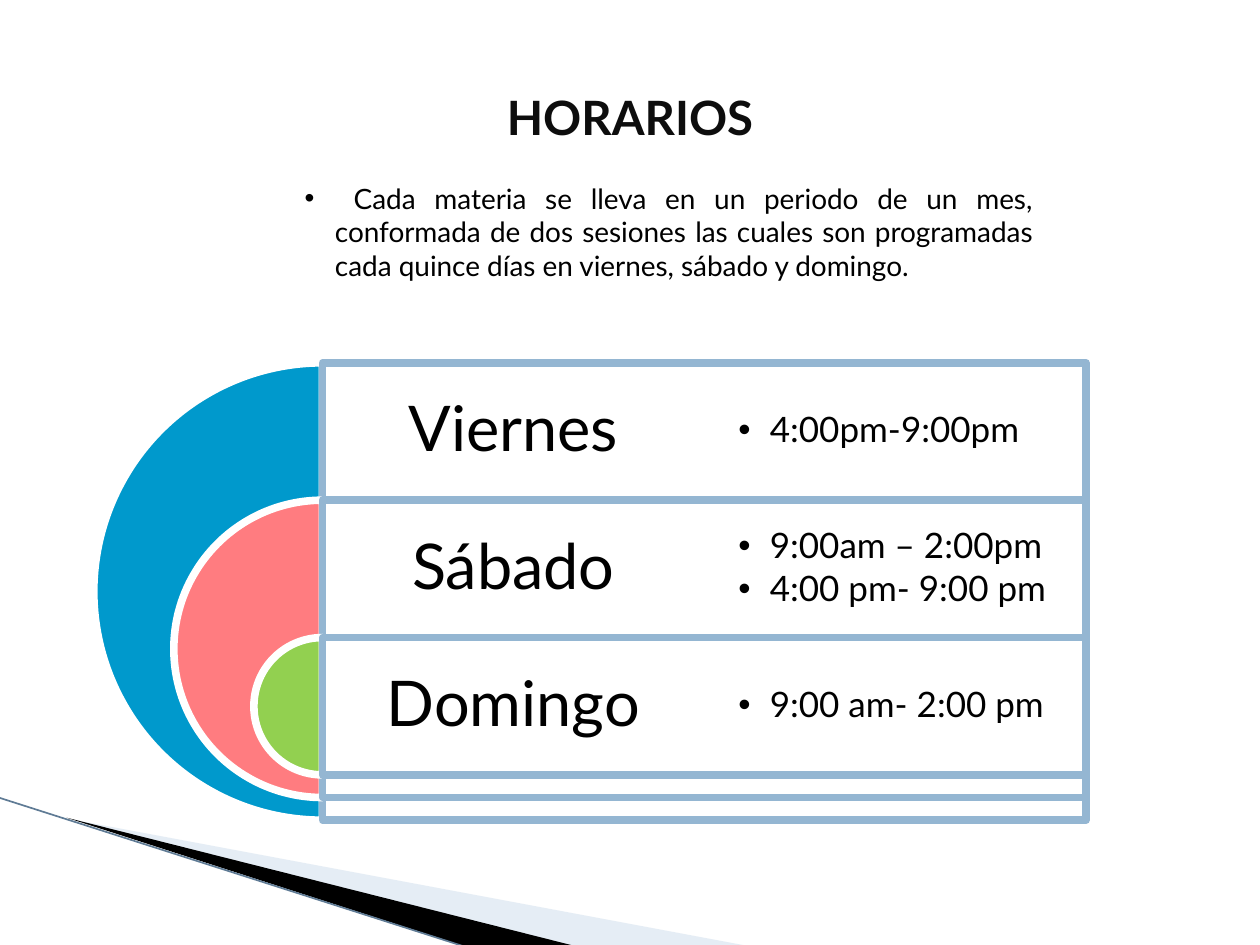
from dataclasses import dataclass
from typing import Sequence

from pptx import Presentation, util as u
from pptx.dml.color import RGBColor
from pptx.enum import shapes, text
from pptx.oxml import parse_xml
from pptx.oxml.ns import nsdecls, qn


@dataclass(frozen=True)
class Theme:
    font: str = "Lato"
    ink: str = "000000"
    heading: str = "0D0D0D"
    paper: str = "FFFFFF"
    frame: str = "94B6D2"
    wedge: str = "C0D3E6"
    edge: str = "5F7B95"
    title_size: float = 27
    body_size: float = 16
    day_size: float = 36
    hours_size: float = 20
    border: float = 4.33


@dataclass(frozen=True)
class Day:
    name: str
    hours: Sequence[str]
    color: str


@dataclass(frozen=True)
class Box:
    left: float
    top: float
    width: float
    height: float

    def emu(self) -> list:
        return [u.Inches(v) for v in (self.left, self.top, self.width, self.height)]


THEME = Theme()
WIDTH, HEIGHT = 10, 7.5
GRID_LEFT, GRID_TOP = 2.56, 2.88
COLUMN, ROW = 3.03, 1.09
RING_STEP = 1.27
DAYS = (
    Day("Viernes", ("4:00pm-9:00pm",), "0099CC"),
    Day("Sábado", ("9:00am – 2:00pm", "4:00 pm- 9:00 pm"), "FF7C80"),
    Day("Domingo", ("9:00 am- 2:00 pm",), "92D050"),
)
INTRO = (" Cada materia se lleva en un periodo de un mes, conformada de dos sesiones "
         "las cuales son programadas cada quince días en viernes, sábado y domingo.")


def rgb(value: str) -> RGBColor:
    return RGBColor.from_string(value)


def fill_shape(sp, color: str, opacity: int = 100) -> None:
    sp.shadow.inherit = False
    sp.fill.solid()
    sp.fill.fore_color.rgb = rgb(color)
    if opacity < 100:
        clr = sp._element.spPr.find(qn("a:solidFill"))[0]
        clr.append(parse_xml(f'<a:alpha {nsdecls("a")} val="{opacity * 1000}"/>'))


def add_block(s, kind, box: Box, color: str, line: str, opacity: int = 100):
    sp = s.shapes.add_shape(kind, *box.emu())
    fill_shape(sp, color, opacity)
    sp.line.color.rgb = rgb(line)
    sp.line.width = u.Pt(THEME.border)
    return sp


def add_wedge(s, points: Sequence, color: str, opacity: int = 100) -> None:
    (x, y), *rest = [(u.Inches(px), u.Inches(py)) for px, py in points]
    builder = s.shapes.build_freeform(x, y)
    builder.add_line_segments(rest, close=True)
    sp = builder.convert_to_shape()
    fill_shape(sp, color, opacity)
    sp.line.fill.background()


def add_text(s, box: Box, lines: Sequence[str], size: float, align, *,
             color: str = THEME.ink, bold: bool = False, bullet: float = 0,
             inset: float = 0, spacing: float = 1, after: float = 0,
             anchor=text.MSO_ANCHOR.MIDDLE) -> None:
    """Add a text box; bullet is the hanging indent in inches, 0 for none."""
    tf = s.shapes.add_textbox(*box.emu()).text_frame
    tf.word_wrap = True
    tf.vertical_anchor = anchor
    if inset:
        tf.margin_left = tf.margin_right = u.Inches(inset)
        tf.margin_top = tf.margin_bottom = u.Inches(inset)
    tf.text = "\n".join(lines)
    for p in tf.paragraphs:
        p.alignment = align
        p.line_spacing = spacing
        p.space_after = u.Pt(after)
        if bullet:
            pPr = p._p.get_or_add_pPr()
            pPr.set("marL", str(u.Inches(bullet)))
            pPr.set("indent", str(-u.Inches(bullet)))
            pPr.append(parse_xml(f'<a:buFont {nsdecls("a")} typeface="Arial"/>'))
            pPr.append(parse_xml(f'<a:buChar {nsdecls("a")} char="•"/>'))
        for r in p.runs:
            r.font.name, r.font.size, r.font.bold = THEME.font, u.Pt(size), bold
            r.font.color.rgb = rgb(color)


def add_corner(s) -> None:
    """Draw the slanted decoration at the foot of the slide."""
    add_wedge(s, ((0.55, 6.5), (5.95, 7.51), (4.56, 7.51)), THEME.wedge, 40)
    add_wedge(s, ((0.53, 6.49), (4.57, 7.51), (3.72, 7.52)), THEME.ink)
    ends = [u.Inches(v) for v in (-0.01, 6.33, 3.71, 7.52)]
    edge = s.shapes.add_connector(shapes.MSO_CONNECTOR.STRAIGHT, *ends)
    edge.line.color.rgb = rgb(THEME.edge)
    edge.line.width = u.Pt(0.95)
    edge._element.spPr.append(parse_xml(f'<a:effectLst {nsdecls("a")}/>'))


def add_day(s, index: int, day: Day) -> None:
    """Draw a half ring, its frame down to the ring's foot, and the row's text."""
    top = GRID_TOP + index * ROW
    size = ROW + RING_STEP * (len(DAYS) - 1 - index)
    pie = add_block(s, shapes.MSO_SHAPE.PIE, Box(GRID_LEFT - size / 2, top, size, size),
                    day.color, THEME.paper)
    pie.adjustments[0], pie.adjustments[1] = 54, 162
    add_block(s, shapes.MSO_SHAPE.RECTANGLE, Box(GRID_LEFT, top, 2 * COLUMN, size),
              THEME.paper, THEME.frame, 90)
    add_text(s, Box(GRID_LEFT, top, COLUMN, ROW), [day.name], THEME.day_size,
             text.PP_ALIGN.CENTER, inset=0.15, spacing=0.9)
    add_text(s, Box(GRID_LEFT + COLUMN, top, COLUMN, ROW), day.hours, THEME.hours_size,
             text.PP_ALIGN.LEFT, bullet=0.25, inset=0.27, spacing=0.9, after=3)


def main() -> None:
    prs = Presentation()
    prs.slide_width, prs.slide_height = u.Inches(WIDTH), u.Inches(HEIGHT)
    s = prs.slides.add_slide(prs.slide_layouts[6])
    add_corner(s)
    for index, day in enumerate(DAYS):
        add_day(s, index, day)
    add_text(s, Box(0.05 * WIDTH, 0.04 * HEIGHT, 0.9 * WIDTH, HEIGHT / 6), ["HORARIOS"],
             THEME.title_size, text.PP_ALIGN.CENTER, color=THEME.heading, bold=True)
    add_text(s, Box(2.32, 1.39, 5.98, 0.91), [INTRO], THEME.body_size,
             text.PP_ALIGN.JUSTIFY, bullet=0.24, anchor=text.MSO_ANCHOR.TOP)
    prs.save("out.pptx")


if __name__ == "__main__":
    main()
